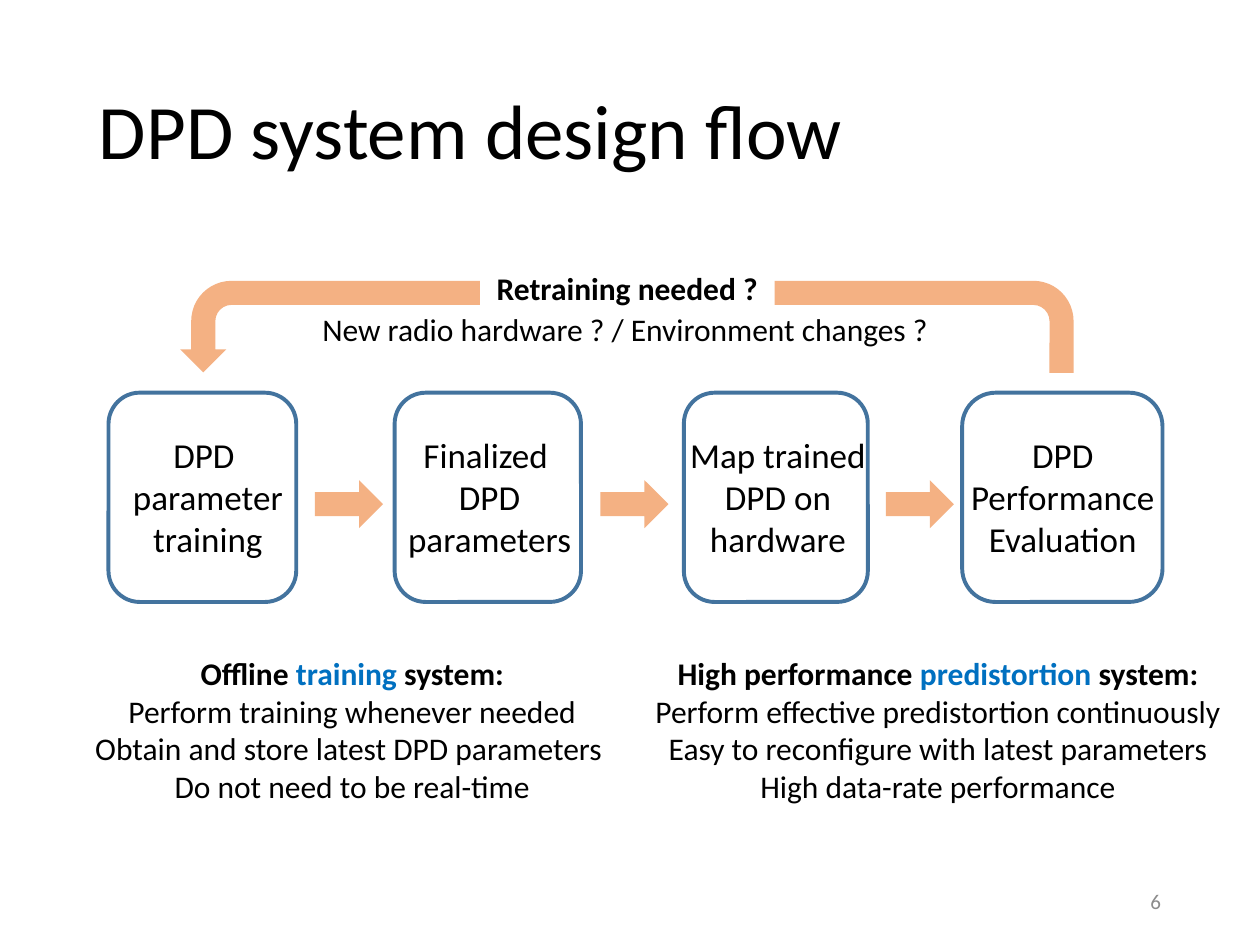
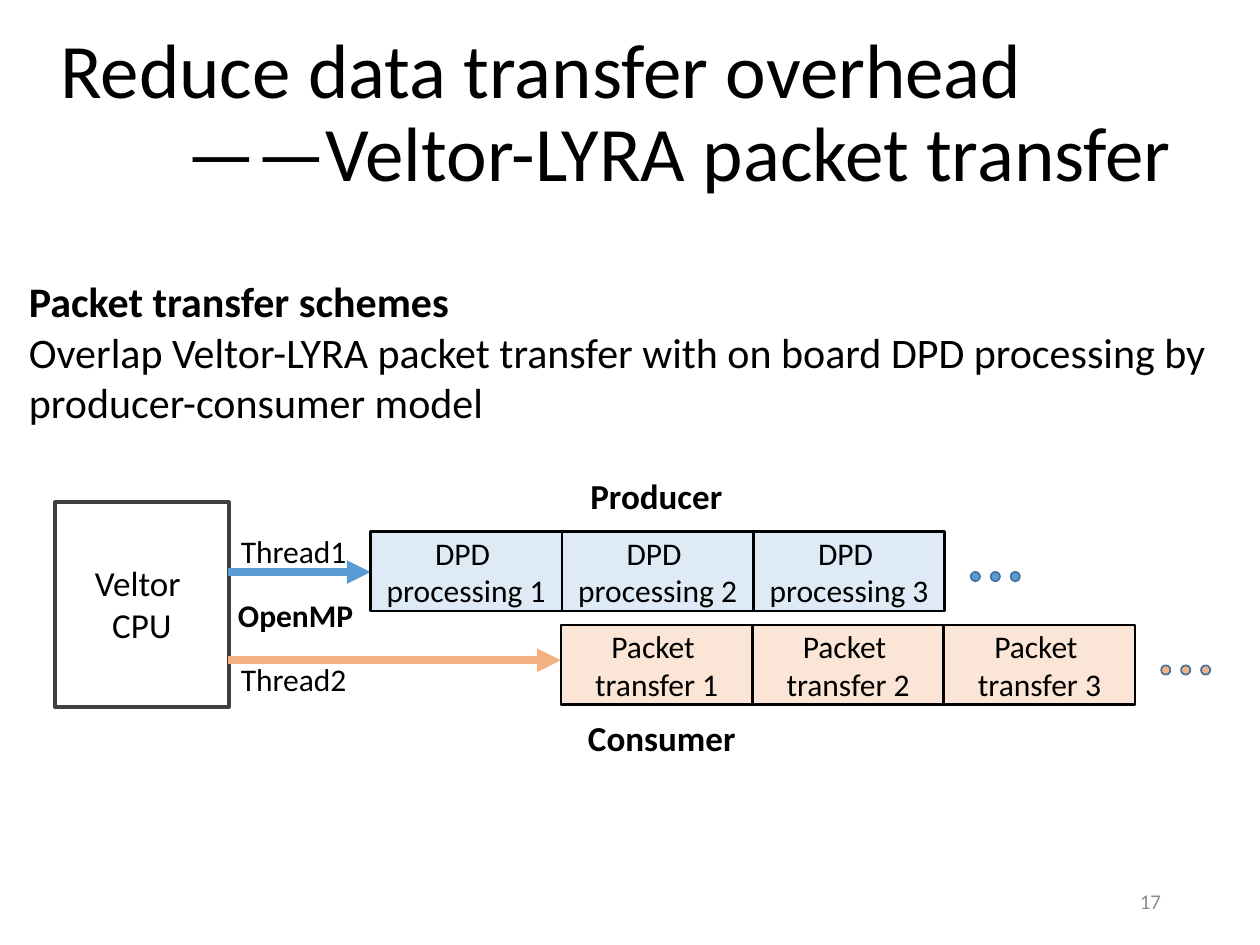
from typing import NamedTuple

from lxml.etree import SubElement
from pptx import Presentation
from pptx.dml.color import RGBColor
from pptx.enum.shapes import MSO_CONNECTOR, MSO_SHAPE
from pptx.enum.text import MSO_ANCHOR, PP_ALIGN
from pptx.oxml.ns import qn
from pptx.util import Pt

FONT = "Calibri"
COLORS = {
    "black": "000000", "white": "FFFFFF", "page": "8C8C8C", "accent": "0070C0",
    "outline": "43739E", "cpu": "404040", "orange": "F4B183", "blue": "5B9BD5",
    "pale_blue": "DEEBF7", "pale_orange": "FBE5D6",
}
LEFT, CENTER, RIGHT = PP_ALIGN.LEFT, PP_ALIGN.CENTER, PP_ALIGN.RIGHT


class Box(NamedTuple):
    x: float
    y: float
    w: float
    h: float


class Run(NamedTuple):
    text: str
    bold: bool = False
    color: str = "black"


class Step(NamedTuple):
    x: float
    w: float
    label_x: float
    label_w: float
    lines: list[str]


class Lane(NamedTuple):
    x: float
    y: float
    lines: list[str]
    fill: str
    dot: str


class Label(NamedTuple):
    box: Box
    text: str
    size: float
    bold: bool


def rgb(name: str) -> RGBColor:
    return RGBColor.from_string(COLORS[name])


def plain(lines: list[str]) -> list[list[Run]]:
    return [[Run(line)] for line in lines]


def write(tf, paras: list[list[Run]], size: float, align=LEFT) -> None:
    for i, runs in enumerate(paras):
        p = tf.paragraphs[0] if i == 0 else tf.add_paragraph()
        p.alignment = align
        for run in runs:
            r = p.add_run()
            r.text = run.text
            r.font.name, r.font.size, r.font.bold = FONT, Pt(size), run.bold
            r.font.color.rgb = rgb(run.color)


def add_text(slide, box: Box, paras: list[list[Run]], size: float, align=LEFT,
             anchor=MSO_ANCHOR.TOP, wrap: bool = False):
    tf = slide.shapes.add_textbox(*map(Pt, box)).text_frame
    tf.word_wrap = wrap
    tf.vertical_anchor = anchor
    write(tf, paras, size, align)
    return tf


def add_shape(slide, kind, box: Box, fill: str = "", line: str = "", width: float = 1):
    s = slide.shapes.add_shape(kind, *map(Pt, box))
    s.shadow.inherit = False
    if fill:
        s.fill.solid()
        s.fill.fore_color.rgb = rgb(fill)
    else:
        s.fill.background()
    if line:
        s.line.color.rgb = rgb(line)
        s.line.width = Pt(width)
    else:
        s.line.fill.background()
    s.text_frame.vertical_anchor = MSO_ANCHOR.MIDDLE
    return s


def add_arrow(slide, x1: float, x2: float, y: float, color: str) -> None:
    c = slide.shapes.add_connector(MSO_CONNECTOR.STRAIGHT, Pt(x1), Pt(y), Pt(x2), Pt(y))
    c.line.color.rgb = rgb(color)
    c.line.width = Pt(4.5)
    SubElement(c.line._get_or_add_ln(), qn("a:tailEnd"), type="triangle")
    SubElement(c.element.spPr, qn("a:effectLst"))


def add_slide(prs, title: list[str], title_box: Box, number: int):
    """Start a slide with its title and page number."""
    slide = prs.slides.add_slide(prs.slide_layouts[6])
    tf = add_text(slide, title_box, plain(title), 44, anchor=MSO_ANCHOR.MIDDLE, wrap=True)
    for i, p in enumerate(tf.paragraphs):
        p.line_spacing = 0.9
        if i:
            p._p.get_or_add_pPr().set("marL", str(Pt(72)))
    add_text(slide, Box(508.5, 500.5, 162, 28.75), [[Run(str(number), color="page")]], 12,
             RIGHT, MSO_ANCHOR.MIDDLE, True)
    return slide


def build_design_flow(prs) -> None:
    slide = add_slide(prs, ["DPD system design flow"], Box(49.5, 24.5, 708.5, 104.4), 6)

    # Four steps and the arrows between them
    steps = [
        Step(62, 107.3, 68.4, 100.8, ["DPD ", "parameter", "training"]),
        Step(225.5, 106.5, 225.4, 108.7, ["Finalized ", "DPD", "parameters"]),
        Step(390.8, 105.1, 386.6, 115.9, ["Map trained", "DPD on", "hardware"]),
        Step(549.8, 114.5, 547.2, 120.2, ["DPD", "Performance", "Evaluation"]),
    ]
    for i, step in enumerate(steps):
        add_shape(slide, MSO_SHAPE.ROUNDED_RECTANGLE, Box(step.x, 224.4, step.w, 119.6),
                  line="outline", width=2.25)
        add_text(slide, Box(step.label_x, 244.1, step.label_w, 80), plain(step.lines), 20, CENTER)
        if i:
            add_shape(slide, MSO_SHAPE.RIGHT_ARROW,
                      Box(180 + 163.1 * (i - 1), 274.4, 38.9, 27.4), "orange")

    # Retraining loop
    s = add_shape(slide, MSO_SHAPE.U_TURN_ARROW, Box(103, 160.5, 510.5, 52.6), "orange")
    for i, value in enumerate([0.262, 0.25, 0.25, 0.438, 0.995]):
        s.adjustments[i] = value
    s.element.spPr.xfrm.set("flipH", "1")
    add_text(slide, Box(177.1, 173.5, 369.4, 29),
             plain(["New radio hardware ? / Environment changes ?"]), 18)
    s = add_shape(slide, MSO_SHAPE.RECTANGLE, Box(274.3, 150, 168.3, 29.5), "white")
    write(s.text_frame, [[Run("Retraining needed ?", True)]], 18, CENTER)

    # The two systems under the steps
    systems = [
        (Box(45.4, 370, 311.8, 94.3), "Offline ", "training",
         ["Perform training whenever needed", "Obtain and store latest DPD parameters ",
          "Do not need to be real-time"]),
        (Box(365, 370, 342, 94.3), "High performance ", "predistortion",
         ["Perform effective predistortion continuously",
          "Easy to reconfigure with latest parameters", "High data-rate performance"]),
    ]
    for box, lead, key, lines in systems:
        heading = [Run(lead, True), Run(key, True, "accent"), Run(" system:", True)]
        add_text(slide, box, [heading, *plain(lines)], 18, CENTER)


def build_packet_transfer(prs) -> None:
    slide = add_slide(prs, ["Reduce data transfer overhead", "——Veltor-LYRA packet transfer"],
                      Box(27.4, 13.7, 726.5, 104.4), 17)
    add_text(slide, Box(9.4, 154, 704.9, 94.3), [
        [Run("Packet transfer schemes", True)],
        [Run("Overlap Veltor-LYRA packet transfer with on board DPD processing by")],
        [Run("producer-consumer model")],
    ], 24)

    # CPU and its threads
    add_shape(slide, MSO_SHAPE.RECTANGLE, Box(31.5, 287.1, 99.2, 117), line="cpu", width=2.25)
    add_text(slide, Box(45.4, 317.5, 71.3, 55.4), plain(["Veltor ", "CPU"]), 20, CENTER)
    add_arrow(slide, 130.5, 211.7, 326.9, "blue")
    add_arrow(slide, 130.5, 320.5, 377.3, "orange")

    # Lanes of overlapping work, each continued by three dots
    block_w, block_h, dot = 109.4, 45.4, 5.3
    lanes = [
        Lane(211.7, 303.8, ["DPD ", "processing"], "pale_blue", "blue"),
        Lane(320.5, 357.2, ["Packet ", "transfer"], "pale_orange", "orange"),
    ]
    for lane in lanes:
        first, second = lane.lines
        for i in range(3):
            s = add_shape(slide, MSO_SHAPE.RECTANGLE,
                          Box(lane.x + i * block_w, lane.y, block_w, block_h),
                          lane.fill, "black", 1.5)
            write(s.text_frame, plain([first, f"{second} {i + 1}"]), 18, CENTER)
            add_shape(slide, MSO_SHAPE.OVAL,
                      Box(lane.x + 3 * block_w + 14.8 + 11.4 * i, lane.y + 23, dot, dot),
                      lane.dot, "outline")

    # Labels of threads and lanes
    labels = [
        Label(Box(130.5, 300.3, 75.6, 29), "Thread1", 18, False),
        Label(Box(130.5, 373.6, 75.6, 29), "Thread2", 18, False),
        Label(Box(128.9, 337, 80.6, 29), "OpenMP", 18, True),
        Label(Box(330.3, 267.8, 90.7, 31.5), "Producer", 20, True),
        Label(Box(328.9, 406.1, 100.1, 31.5), "Consumer", 20, True),
    ]
    for label in labels:
        add_text(slide, label.box, [[Run(label.text, label.bold)]], label.size)


def main() -> None:
    prs = Presentation()
    prs.slide_width, prs.slide_height = Pt(720), Pt(540)
    build_design_flow(prs)
    build_packet_transfer(prs)
    prs.save("out.pptx")


if __name__ == "__main__":
    main()
